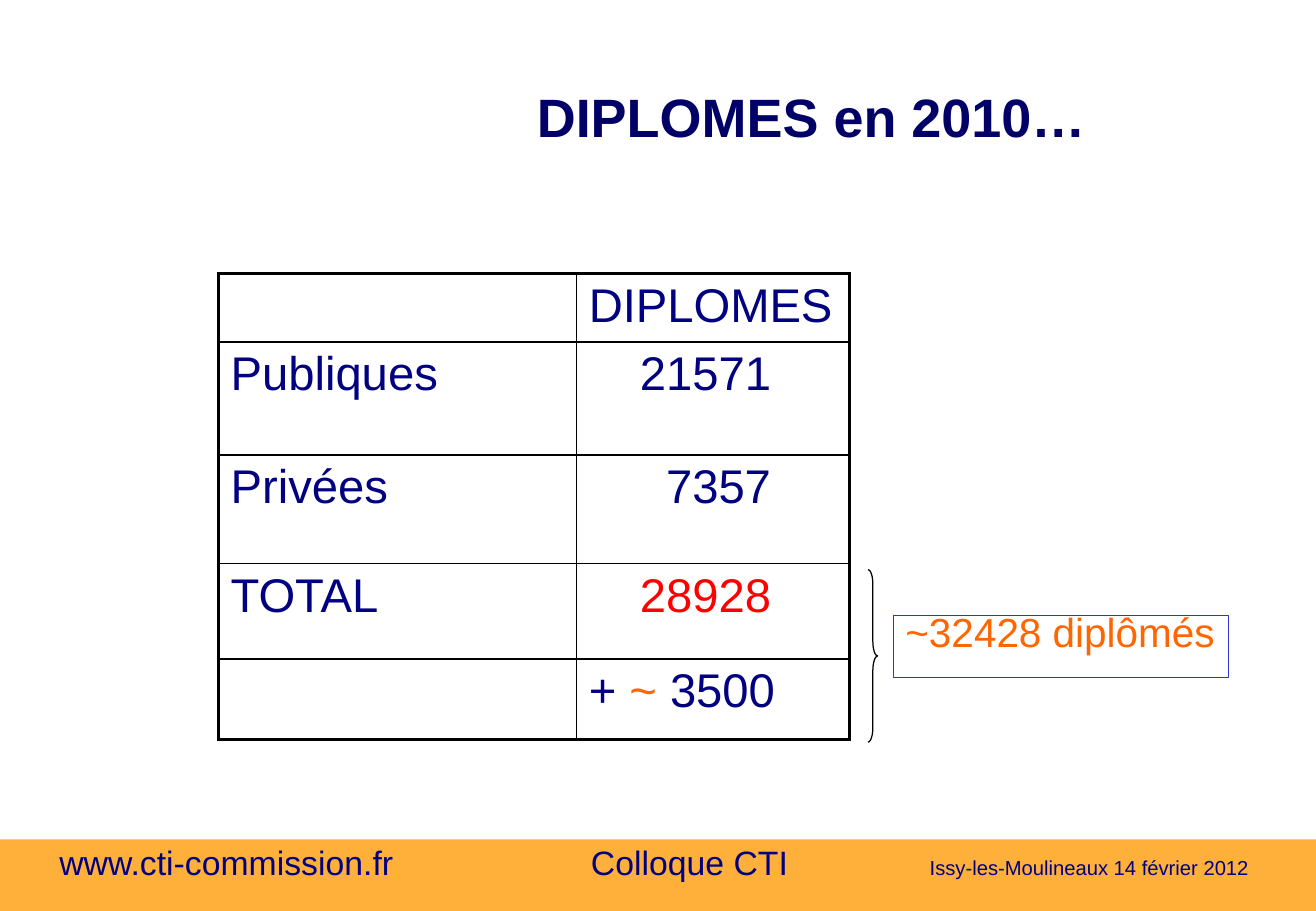
from lxml.etree import SubElement
from pptx import Presentation
from pptx.dml.color import RGBColor
from pptx.enum.shapes import MSO_SHAPE
from pptx.enum.text import MSO_ANCHOR, PP_ALIGN
from pptx.oxml.ns import qn
from pptx.util import Inches, Pt

NAVY, ORANGE, RED = "000080", "FF6600", "FF0000"


def set_color(target, hex_string):
    target.rgb = RGBColor.from_string(hex_string)


def format_run(run, size, color, bold=False):
    run.font.name = "Arial"
    run.font.size = Pt(size)
    run.font.bold = bold
    set_color(run.font.color, color)


presentation = Presentation()
presentation.slide_width = Inches(10.84)
presentation.slide_height = Inches(7.5)
slide = presentation.slides.add_slide(presentation.slide_layouts[5])
shapes = slide.shapes

# Footer band
band = shapes.add_shape(MSO_SHAPE.RECTANGLE, 0, Inches(6.91),
                        presentation.slide_width, Inches(0.59))
band.shadow.inherit = False
band.fill.solid()
set_color(band.fill.fore_color, "FFB03A")
band.line.fill.background()

# Footer text, in three columns set by tab stops
footer = shapes.add_textbox(Inches(0.39), Inches(6.94), Inches(10.04), Inches(0.35))
footer.text_frame.word_wrap = True
paragraph = footer.text_frame.paragraphs[0]
paragraph.line_spacing = 0.81
tab_list = SubElement(paragraph._p.get_or_add_pPr(), qn("a:tabLst"))
for position in (4.38, 7.17):
    SubElement(tab_list, qn("a:tab"), pos=str(Inches(position)), algn="l")
for text, size in (("www.cti-commission.fr\tColloque CTI\t", 20),
                   ("Issy-les-Moulineaux 14 février 2012", 12)):
    run = paragraph.add_run()
    run.text = text
    format_run(run, size, NAVY)

# Title
title = shapes.title
title.left, title.top = Inches(2.82), Inches(0.52)
title.width, title.height = Inches(7.73), Inches(1.02)
frame = title.text_frame
frame.text = "DIPLOMES en 2010…"
frame.vertical_anchor = MSO_ANCHOR.MIDDLE
frame.margin_left = frame.margin_right = frame.margin_top = 0
frame.margin_bottom = Inches(0.06)
frame.paragraphs[0].alignment = PP_ALIGN.CENTER
frame.paragraphs[0].line_spacing = 0.81
format_run(frame.paragraphs[0].runs[0], 32, "000066", bold=True)

# Table of graduates: each cell is a list of (text, color) runs
rows = [
    ([], [("DIPLOMES", NAVY)]),
    ([("Publiques", NAVY)], [("21571", NAVY)]),
    ([("Privées", NAVY)], [("7357", NAVY)]),
    ([("TOTAL", NAVY)], [("28928", RED)]),
    ([], [("+ ", NAVY), ("~", ORANGE), (" 3500", NAVY)]),
]
column_widths = (2.95, 2.25)
row_heights = (0.53, 0.93, 0.89, 0.79, 0.66)
last_row, last_column = len(rows) - 1, len(column_widths) - 1
table = shapes.add_table(len(rows), len(column_widths), Inches(1.8), Inches(2.25),
                         Inches(sum(column_widths)), Inches(sum(row_heights))).table
table.first_row = table.horz_banding = False
for column, width in zip(table.columns, column_widths):
    column.width = Inches(width)
for row, height in zip(table.rows, row_heights):
    row.height = Inches(height)

for row_index, row in enumerate(rows):
    for column_index, parts in enumerate(row):
        cell = table.cell(row_index, column_index)
        paragraph = cell.text_frame.paragraphs[0]
        for text, color in parts:
            run = paragraph.add_run()
            run.text = text
            format_run(run, 28, color)
        # Figures line up on their last digit
        if column_index == last_column and 0 < row_index < last_row:
            paragraph.alignment = PP_ALIGN.RIGHT
            cell.margin_right = Inches(0.65)
        # Thick frame outside, thin rules inside
        properties = cell._tc.get_or_add_tcPr()
        for tag, is_outer in (("a:lnL", column_index == 0),
                              ("a:lnR", column_index == last_column),
                              ("a:lnT", row_index == 0),
                              ("a:lnB", row_index == last_row)):
            border = SubElement(properties, qn(tag), w=str(Pt(2.25 if is_outer else 1)))
            SubElement(SubElement(border, qn("a:solidFill")), qn("a:srgbClr"), val="000000")
        cell.fill.background()

# Brace joining the last two rows, and the overall total
brace = shapes.add_shape(MSO_SHAPE.RIGHT_BRACE, Inches(7.15), Inches(4.69),
                         Inches(0.08), Inches(1.42))
brace.adjustments[0] = 1.48
total = shapes.add_shape(MSO_SHAPE.RECTANGLE, Inches(7.36), Inches(5.07),
                         Inches(2.76), Inches(0.51))
for shape, line_color in ((brace, "000000"), (total, "3333CC")):
    shape.shadow.inherit = False
    shape.fill.background()
    set_color(shape.line.color, line_color)
    shape.line.width = Pt(0.75)

frame = total.text_frame
frame.text = "~32428 diplômés"
frame.word_wrap = False
frame.vertical_anchor = MSO_ANCHOR.TOP
frame.paragraphs[0].alignment = PP_ALIGN.LEFT
frame.paragraphs[0].line_spacing = 0.66
format_run(frame.paragraphs[0].runs[0], 24, ORANGE)

presentation.save("out.pptx")
